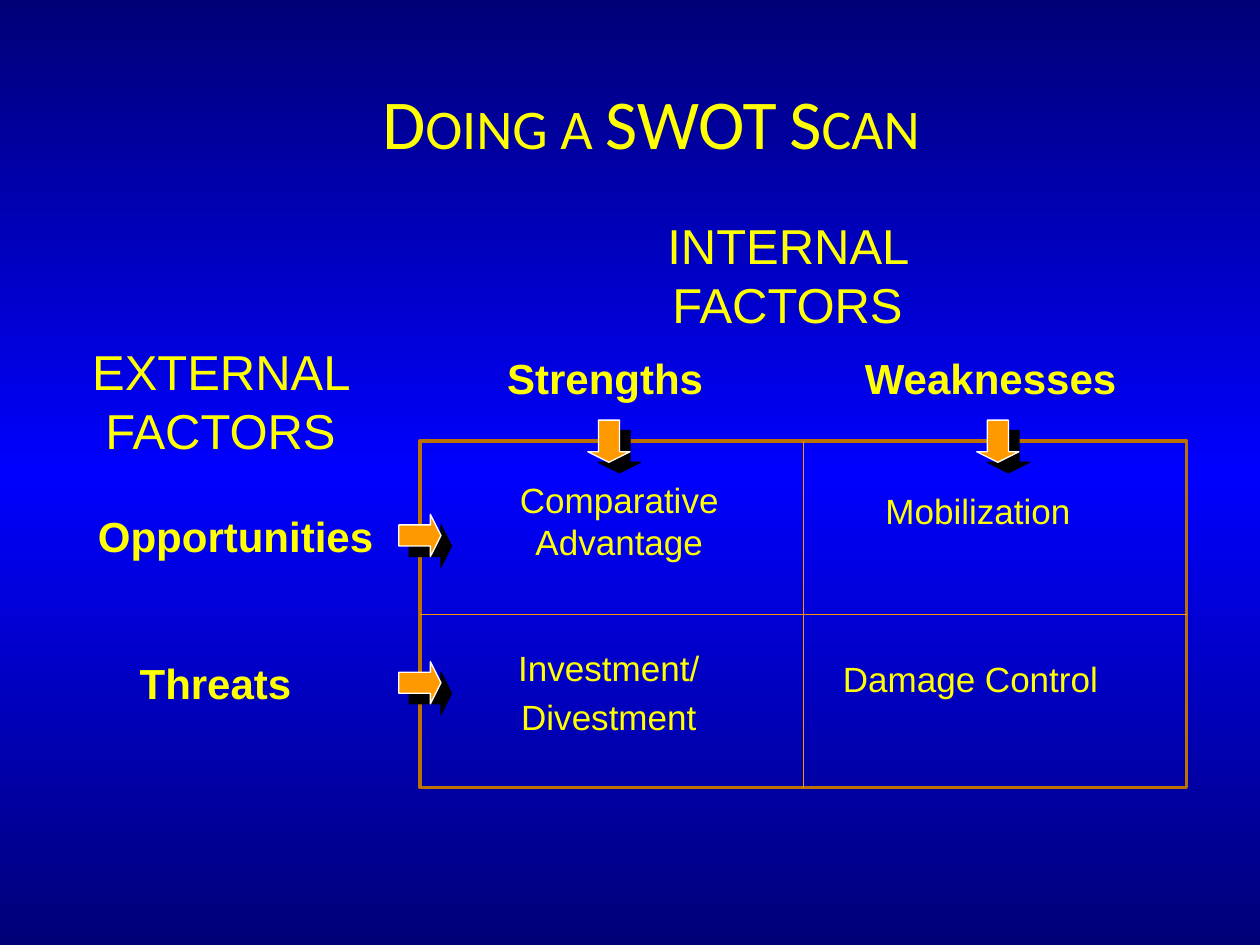
from copy import deepcopy
from dataclasses import dataclass

from lxml.etree import SubElement
from pptx import Presentation
from pptx.dml.color import RGBColor
from pptx.enum.shapes import MSO_CONNECTOR, MSO_SHAPE
from pptx.enum.text import MSO_ANCHOR, MSO_AUTO_SIZE, PP_ALIGN
from pptx.oxml.ns import qn
from pptx.slide import Slide
from pptx.util import Cm, Pt


@dataclass(frozen=True)
class Theme:
    edge: RGBColor = RGBColor(0x00, 0x00, 0x76)
    middle: RGBColor = RGBColor(0x00, 0x00, 0xFF)
    text: RGBColor = RGBColor(0xFF, 0xFF, 0x00)
    frame: RGBColor = RGBColor(0xBD, 0x71, 0x00)
    divider: RGBColor = RGBColor(0xF9, 0x96, 0x00)
    arrow: RGBColor = RGBColor(0xFF, 0x99, 0x00)
    arrow_line: RGBColor = RGBColor(0xFF, 0xFF, 0xFF)
    arrow_shadow: str = "000000"
    title_font: str = "Calibri"
    body_font: str = "Arial"
    title_size: int = 40
    axis_size: int = 28
    factor_size: int = 24
    cell_size: int = 20


THEME = Theme()


@dataclass(frozen=True)
class Box:
    """A rectangle in centimetres."""
    left: float
    top: float
    width: float
    height: float


@dataclass(frozen=True)
class Label:
    lines: tuple[str, ...]
    box: Box
    size: int
    bold: bool = False
    wrap: bool = False


@dataclass(frozen=True)
class Arrow:
    left: float
    top: float
    rotation: int = 0


MATRIX = Box(8.47, 8.89, 15.45, 6.99)
TITLE_BOX = Box(2.33, 0.85, 21.59, 3.18)
ARROW_SIDE = 0.85

ARROWS = (
    Arrow(8.04, 10.37),
    Arrow(8.04, 13.34),
    Arrow(11.85, 8.47, 90),
    Arrow(19.69, 8.47, 90),
)

LABELS = (
    Label(("INTERNAL FACTORS",), Box(12.7, 4.23, 6.35, 2.64), THEME.axis_size, wrap=True),
    Label(("EXTERNAL FACTORS",), Box(1.27, 6.77, 6.35, 2.64), THEME.axis_size, wrap=True),
    Label(("Threats",), Box(2.54, 13.12, 3.61, 1.3), THEME.factor_size, bold=True),
    Label(("Opportunities",), Box(1.69, 10.16, 6.12, 1.3), THEME.factor_size, bold=True),
    Label(("Strengths",), Box(9.95, 6.99, 4.5, 1.3), THEME.factor_size, bold=True),
    Label(("Weaknesses",), Box(17.15, 6.99, 5.64, 1.3), THEME.factor_size, bold=True),
    Label(("Comparative Advantage",), Box(9.31, 9.53, 6.35, 1.96), THEME.cell_size, wrap=True),
    Label(("Investment/", "Divestment"), Box(9.1, 12.91, 6.35, 2.13), THEME.cell_size, wrap=True),
    Label(("Damage Control",), Box(16.72, 13.12, 5.69, 1.12), THEME.cell_size),
    Label(("Mobilization",), Box(17.57, 9.74, 4.29, 1.12), THEME.cell_size),
)


def lengths(box: Box) -> tuple[Cm, Cm, Cm, Cm]:
    return Cm(box.left), Cm(box.top), Cm(box.width), Cm(box.height)


def paint_background(slide: Slide) -> None:
    fill = slide.background.fill
    fill.gradient()
    fill.gradient_angle = 90
    stop_list = slide.element.find(".//" + qn("a:gsLst"))
    stop_list.append(deepcopy(stop_list[-1]))
    colors = (THEME.edge, THEME.middle, THEME.edge)
    for stop, color, position in zip(fill.gradient_stops, colors, (0, 0.5, 1)):
        stop.color.rgb = color
        stop.position = position


def add_matrix_frame(slide: Slide) -> None:
    frame = slide.shapes.add_shape(MSO_SHAPE.RECTANGLE, *lengths(MATRIX))
    frame.shadow.inherit = False
    frame.fill.background()
    frame.line.color.rgb = THEME.frame
    frame.line.width = Pt(2)


def add_title(slide: Slide) -> None:
    shape = slide.shapes.add_textbox(*lengths(TITLE_BOX))
    shape.text_frame.word_wrap = True
    shape.text_frame.vertical_anchor = MSO_ANCHOR.MIDDLE
    paragraph = shape.text_frame.paragraphs[0]
    paragraph.alignment = PP_ALIGN.CENTER
    run = paragraph.add_run()
    run.text = "Doing a SWOT Scan"
    run.font.name = THEME.title_font
    run.font.size = Pt(THEME.title_size)
    run.font.color.rgb = THEME.text
    run.font._element.set("cap", "small")


def add_arrow(slide: Slide, arrow: Arrow) -> None:
    """Draw a block arrow with a hard shadow to the lower right."""
    box = Box(arrow.left, arrow.top, ARROW_SIDE, ARROW_SIDE)
    shape = slide.shapes.add_shape(MSO_SHAPE.RIGHT_ARROW, *lengths(box))
    shape.adjustments[0] = 0.5
    shape.adjustments[1] = 0.25
    shape.rotation = arrow.rotation
    shape.fill.solid()
    shape.fill.fore_color.rgb = THEME.arrow
    shape.line.color.rgb = THEME.arrow_line
    shape.line.width = Pt(0.75)
    shape.shadow.inherit = False
    effects = shape.element.spPr.find(qn("a:effectLst"))
    shadow = SubElement(effects, qn("a:outerShdw"), dist=str(Pt(8.5)),
                        dir="2700000", algn="ctr", rotWithShape="0")
    SubElement(shadow, qn("a:srgbClr"), val=THEME.arrow_shadow)


def add_label(slide: Slide, label: Label) -> None:
    shape = slide.shapes.add_textbox(*lengths(label.box))
    frame = shape.text_frame
    frame.word_wrap = label.wrap
    frame.auto_size = MSO_AUTO_SIZE.SHAPE_TO_FIT_TEXT
    for index, line in enumerate(label.lines):
        paragraph = frame.add_paragraph() if index else frame.paragraphs[0]
        paragraph.alignment = PP_ALIGN.CENTER
        space = SubElement(paragraph._p.get_or_add_pPr(), qn("a:spcBef"))
        SubElement(space, qn("a:spcPct"), val="20000")
        run = paragraph.add_run()
        run.text = line
        run.font.name = THEME.body_font
        run.font.size = Pt(label.size)
        run.font.bold = label.bold
        run.font.color.rgb = THEME.text


def add_divider(slide: Slide, left: float, top: float, right: float, bottom: float) -> None:
    line = slide.shapes.add_connector(
        MSO_CONNECTOR.STRAIGHT, Cm(left), Cm(top), Cm(right), Cm(bottom))
    line.line.color.rgb = THEME.divider
    line.line.width = Pt(0.75)
    SubElement(line.element.spPr, qn("a:effectLst"))


def main() -> None:
    presentation = Presentation()
    presentation.slide_width = Cm(25.4)
    presentation.slide_height = Cm(19.05)
    slide = presentation.slides.add_slide(presentation.slide_layouts[6])
    paint_background(slide)
    add_matrix_frame(slide)
    add_title(slide)
    for arrow in ARROWS:
        add_arrow(slide, arrow)
    for label in LABELS:
        add_label(slide, label)
    right, bottom = MATRIX.left + MATRIX.width, MATRIX.top + MATRIX.height
    center = MATRIX.left + MATRIX.width / 2
    middle = MATRIX.top + MATRIX.height / 2
    add_divider(slide, MATRIX.left, middle, right, middle)
    add_divider(slide, center, MATRIX.top, center, bottom)
    presentation.save("out.pptx")


if __name__ == "__main__":
    main()
